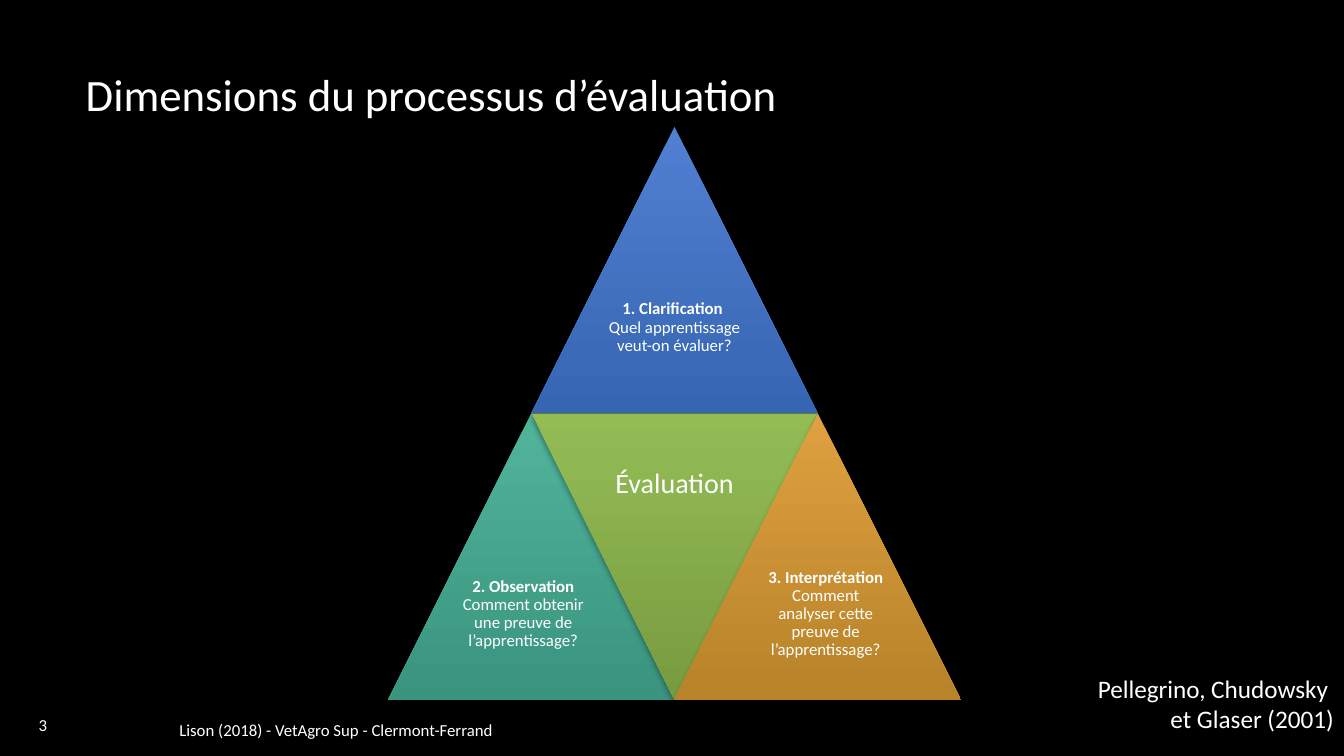
"""Build the slide showing the assessment triangle and its three dimensions."""
from dataclasses import dataclass

from lxml import etree
from pptx import Presentation
from pptx.dml.color import RGBColor
from pptx.enum.shapes import MSO_SHAPE
from pptx.enum.text import MSO_ANCHOR, MSO_AUTO_SIZE, PP_ALIGN
from pptx.oxml.ns import qn
from pptx.shapes.base import BaseShape
from pptx.shapes.shapetree import GroupShapes
from pptx.text.text import TextFrame
from pptx.util import Inches, Pt

TRIANGLE = MSO_SHAPE.ISOSCELES_TRIANGLE
MIDDLE, TOP = MSO_ANCHOR.MIDDLE, MSO_ANCHOR.TOP
LEFT, CENTER, RIGHT = PP_ALIGN.LEFT, PP_ALIGN.CENTER, PP_ALIGN.RIGHT
NO_AUTOFIT = MSO_AUTO_SIZE.NONE

FONT = "Calibri"
BLACK = RGBColor(0x00, 0x00, 0x00)
WHITE = RGBColor(0xFF, 0xFF, 0xFF)
BLUE = RGBColor(0x51, 0x80, 0xD2)
DARK_BLUE = RGBColor(0x36, 0x65, 0xB3)
TEAL = RGBColor(0x50, 0xB4, 0x9B)
DARK_TEAL = RGBColor(0x3A, 0x94, 0x7F)
GREEN = RGBColor(0x93, 0xBC, 0x55)
DARK_GREEN = RGBColor(0x78, 0x9B, 0x3F)
ORANGE = RGBColor(0xDE, 0xA0, 0x40)
DARK_ORANGE = RGBColor(0xB8, 0x83, 0x29)

SIDE = 2.84
PYRAMID_LEFT, PYRAMID_TOP = 3.85, 1.26


@dataclass(frozen=True)
class TextRun:
    """A piece of text with its size and weight."""

    text: str
    size: int = 12
    bold: bool = False


@dataclass(frozen=True)
class Label:
    """A free text box; each item of lines starts on its own line."""

    box: tuple[float, float, float, float]
    lines: list[list[TextRun]]
    align: PP_ALIGN
    anchor: MSO_ANCHOR = MIDDLE


@dataclass(frozen=True)
class Panel:
    """One triangle, placed by half sides across and full sides down."""

    half_column: int
    row: int
    light: RGBColor
    dark: RGBColor
    lines: list[list[TextRun]]
    insets: tuple[float, float, float, float]
    inverted: bool = False


PANELS = [
    Panel(1, 0, BLUE, DARK_BLUE,
          [[TextRun("1. Clarification ", bold=True)],
           [TextRun("Quel apprentissage veut-on évaluer?")]],
          (0, 0, 0, 0.28)),
    Panel(0, 1, TEAL, DARK_TEAL,
          [[TextRun("2. Observation ", bold=True),
            TextRun("Comment obtenir une preuve de l’apprentissage?")]],
          (0, 0, 0.16, 0.28)),
    Panel(1, 1, GREEN, DARK_GREEN, [[TextRun("Évaluation", 20)]],
          (0, 0, 0, 0), inverted=True),
    Panel(2, 1, ORANGE, DARK_ORANGE,
          [[TextRun("3. Interprétation ", bold=True),
            TextRun("Comment analyser cette preuve de l’apprentissage?")]],
          (0.16, 0, 0, 0.28)),
]

LABELS = [
    Label((1.68, 6.98, 4.28, 0.52),
          [[TextRun("Lison (2018) - VetAgro Sup - Clermont-Ferrand")]], LEFT),
    Label((0.18, 6.93, 0.49, 0.52), [[TextRun("3")]], CENTER),
    Label((10.1, 6.63, 3.23, 0.71),
          [[TextRun("Pellegrino, Chudowsky ", 18)],
           [TextRun("et Glaser (2001)", 18)]], RIGHT, TOP),
]


def write_text(frame: TextFrame, lines: list[list[TextRun]], align: PP_ALIGN,
               anchor: MSO_ANCHOR = MIDDLE, spacing: float = 1.0) -> None:
    """Fill a text frame with one paragraph, run by run."""
    frame.word_wrap = True
    frame.auto_size = NO_AUTOFIT
    frame.vertical_anchor = anchor
    paragraph = frame.paragraphs[0]
    paragraph.alignment = align
    paragraph.line_spacing = spacing
    for index, line in enumerate(lines):
        if index:
            paragraph.add_line_break()
        for item in line:
            run = paragraph.add_run()
            run.text = item.text
            run.font.name = FONT
            run.font.size = Pt(item.size)
            run.font.bold = item.bold
            run.font.color.rgb = WHITE


def add_soft_shadow(shape: BaseShape) -> None:
    """Give a shape a soft black shadow falling straight down."""
    shape.shadow.inherit = False
    effects = shape.element.spPr.find(qn("a:effectLst"))
    shadow = etree.SubElement(effects, qn("a:outerShdw"), blurRad=str(Pt(4)),
                              dist=str(Pt(3)), dir="5400000", rotWithShape="0")
    color = etree.SubElement(shadow, qn("a:srgbClr"), val=str(BLACK))
    etree.SubElement(color, qn("a:alpha"), val="35000")


def add_panel(shapes: GroupShapes, panel: Panel) -> None:
    """Draw a triangle and the text box inside it."""
    left = PYRAMID_LEFT + panel.half_column * SIDE / 2
    top = PYRAMID_TOP + panel.row * SIDE
    triangle = shapes.add_shape(TRIANGLE, Inches(left), Inches(top),
                                Inches(SIDE), Inches(SIDE))
    triangle.rotation = 180 if panel.inverted else 0
    triangle.line.fill.background()
    triangle.fill.gradient()
    triangle.fill.gradient_angle = 270
    for stop, color in zip(triangle.fill.gradient_stops, (panel.light, panel.dark)):
        stop.color.rgb = color
    triangle.element.spPr.find(qn("a:gradFill")).set("rotWithShape", "0")
    add_soft_shadow(triangle)

    text_top = top if panel.inverted else top + SIDE / 2
    text_box = shapes.add_textbox(Inches(left + SIDE / 4), Inches(text_top),
                                  Inches(SIDE / 2), Inches(SIDE / 2))
    frame = text_box.text_frame
    (frame.margin_left, frame.margin_top,
     frame.margin_right, frame.margin_bottom) = map(Inches, panel.insets)
    write_text(frame, panel.lines, CENTER, spacing=0.9)


def main() -> None:
    """Create the presentation and save it."""
    presentation = Presentation()
    presentation.slide_width = Inches(13.33)
    presentation.slide_height = Inches(7.5)
    slide = presentation.slides.add_slide(
        presentation.slide_layouts.get_by_name("Title Only"))
    slide.background.fill.solid()
    slide.background.fill.fore_color.rgb = BLACK

    title = slide.shapes.title
    title.left, title.top = Inches(0.75), Inches(0.59)
    title.width, title.height = Inches(11.08), Inches(0.67)
    write_text(title.text_frame,
               [[TextRun("Dimensions du processus d’évaluation", 32)]], LEFT)

    pyramid = slide.shapes.add_group_shape()
    for panel in PANELS:
        add_panel(pyramid.shapes, panel)
    for label in LABELS:
        text_box = slide.shapes.add_textbox(*map(Inches, label.box))
        write_text(text_box.text_frame, label.lines, label.align, label.anchor)

    presentation.save("out.pptx")


if __name__ == "__main__":
    main()
